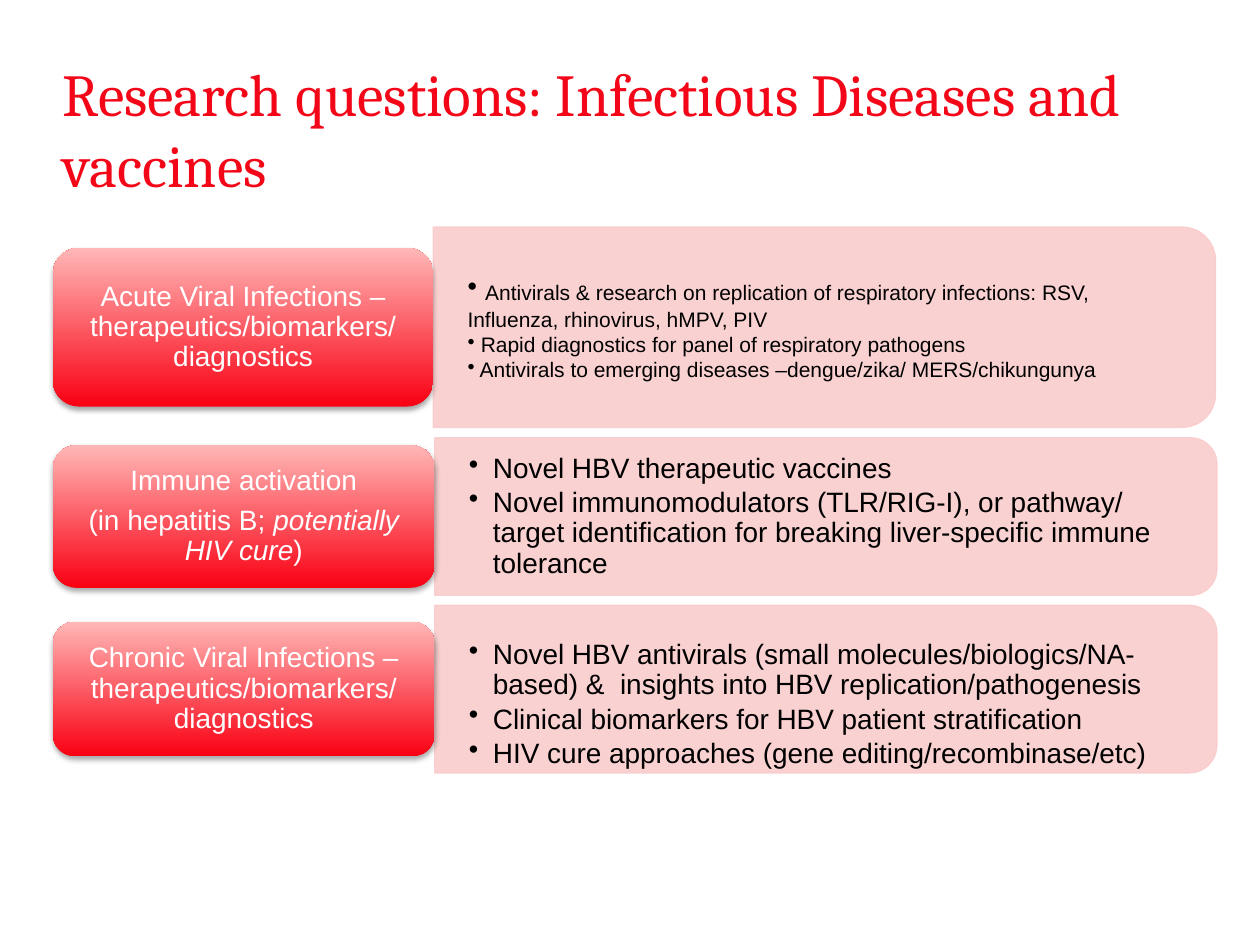
from lxml import etree
from pptx import Presentation
from pptx.dml.color import RGBColor
from pptx.enum.shapes import MSO_SHAPE as Shape
from pptx.enum.text import MSO_ANCHOR as Anchor, PP_ALIGN as Align
from pptx.oxml import parse_xml
from pptx.oxml.ns import nsdecls, qn
from pptx.util import Pt

RED, ROSE, PALE = "F90012", "FFB7B7", "FACCCC"
WHITE, BLACK, TITLE_RED = "FFFFFF", "000000", "F30617"
CARD_SHADOW = (
    f'<a:effectLst {nsdecls("a")}>'
    f'<a:outerShdw blurRad="{Pt(3.1)}" dist="{Pt(1.8)}" dir="5400000" rotWithShape="0">'
    '<a:srgbClr val="000000"><a:alpha val="35000"/></a:srgbClr>'
    '</a:outerShdw></a:effectLst>'
)


def rgb(value):
    return RGBColor.from_string(value)


def add_text(box, paragraphs, font="Arial", size=16, color=BLACK, align=Align.LEFT,
             anchor=Anchor.MIDDLE, line=1.0, after=0, margin=0, hanging=None):
    """Box is left, top, width, height; a paragraph is a list of (text, format) runs.

    A hanging value, even 0, gives bullets with that indent.
    """
    frame = slide.shapes.add_textbox(*map(Pt, box)).text_frame
    frame.word_wrap = True
    frame.vertical_anchor = anchor
    frame.margin_left = frame.margin_right = Pt(margin)
    frame.margin_top = frame.margin_bottom = 0
    for index, runs in enumerate(paragraphs):
        paragraph = frame.paragraphs[0] if index == 0 else frame.add_paragraph()
        paragraph.alignment = align
        paragraph.line_spacing = line
        paragraph.space_after = Pt(after)
        if hanging is not None:
            properties = paragraph._p.get_or_add_pPr()
            properties.set("marL", str(Pt(hanging)))
            properties.set("indent", str(-Pt(hanging)))
            etree.SubElement(properties, qn("a:buChar")).set("char", "•")
        for text, style in runs:
            run = paragraph.add_run()
            run.text = text
            run.font.name = font
            run.font.size = Pt(style.get("size", size))
            run.font.italic = style.get("italic")
            run.font.color.rgb = rgb(color)


presentation = Presentation()
presentation.slide_width, presentation.slide_height = Pt(720), Pt(540)
slide = presentation.slides.add_slide(presentation.slide_layouts[6])

CARD_LEFT, PANEL_WIDTH = 30.2, 447
small = {"size": 12}
tight = {"line": 0.9, "after": 2.4, "hanging": 13.7}
# Each row: centre y, panel height, card width and height, card text,
# panel text, panel text format, downward shift of the panel text
rows = [
    (187, 114.5, 217.4, 90.7,
     [[("Acute Viral Infections – therapeutics/biomarkers/ diagnostics", {})]],
     [[(" ", {}), ("Antivirals & research on replication of respiratory infections: "
                   "RSV, Influenza, rhinovirus, hMPV, PIV", small)],
      [(" Rapid diagnostics for panel of respiratory pathogens", small)],
      [(" Antivirals to emerging diseases –dengue/zika/ MERS/chikungunya", small)]],
     {"hanging": 0}, 0),
    (295.2, 90, 218.2, 81.4,
     [[("Immune activation", {})],
      [("(in hepatitis B; ", {}), ("potentially HIV cure", {"italic": True}), (")", {})]],
     [[("Novel HBV therapeutic vaccines", {})],
      [("Novel immunomodulators (TLR/RIG-I), or pathway/ target identification "
        "for breaking liver-specific immune tolerance", {})]],
     tight, 0),
    (393.8, 95.8, 218.2, 77,
     [[("Chronic Viral Infections – therapeutics/biomarkers/ diagnostics", {})]],
     [[("Novel HBV antivirals (small molecules/biologics/NA- based) &  insights "
        "into HBV replication/pathogenesis", {})],
      [("Clinical biomarkers for HBV patient stratification", {})],
      [("HIV cure approaches (gene editing/recombinase/etc)", {})]],
     tight, 9),
]

for middle, panel_height, card_width, card_height, label, points, style, shift in rows:
    panel_left = CARD_LEFT + card_width
    panel_top = middle - panel_height / 2

    # The panel is a quarter-turned shape, so its frame is upright around the same centre
    panel = slide.shapes.add_shape(
        Shape.ROUND_2_SAME_RECTANGLE,
        Pt(panel_left + (PANEL_WIDTH - panel_height) / 2), Pt(middle - PANEL_WIDTH / 2),
        Pt(panel_height), Pt(PANEL_WIDTH))
    panel.rotation = 90
    panel.shadow.inherit = False
    panel.fill.solid()
    panel.fill.fore_color.rgb = rgb(PALE)
    panel.line.color.rgb = rgb(PALE)
    panel.line.width = Pt(0.75)
    for color in panel._element.spPr.iter(qn("a:srgbClr")):
        etree.SubElement(color, qn("a:alpha")).set("val", "90000")
    add_text((panel_left, panel_top + shift, PANEL_WIDTH - 4.5, panel_height), points,
             margin=19.6, **style)

    card_top = middle - card_height / 2
    card = slide.shapes.add_shape(Shape.ROUNDED_RECTANGLE, Pt(CARD_LEFT), Pt(card_top),
                                  Pt(card_width), Pt(card_height))
    card.fill.gradient()
    card.fill.gradient_angle = 90
    for stop, color in zip(card.fill.gradient_stops, (RED, ROSE)):
        stop.color.rgb = rgb(color)
    card.line.fill.background()
    card._element.spPr.append(parse_xml(CARD_SHADOW))
    add_text((CARD_LEFT + 4, card_top, card_width - 8, card_height), label, color=WHITE,
             align=Align.CENTER, line=0.9, after=5.6, margin=5)

add_text((36, 32.4, 648, 78.5),
         [[("Research questions: Infectious Diseases and vaccines", {})]],
         font="Cambria", size=34, color=TITLE_RED, anchor=Anchor.TOP)

presentation.save("out.pptx")
